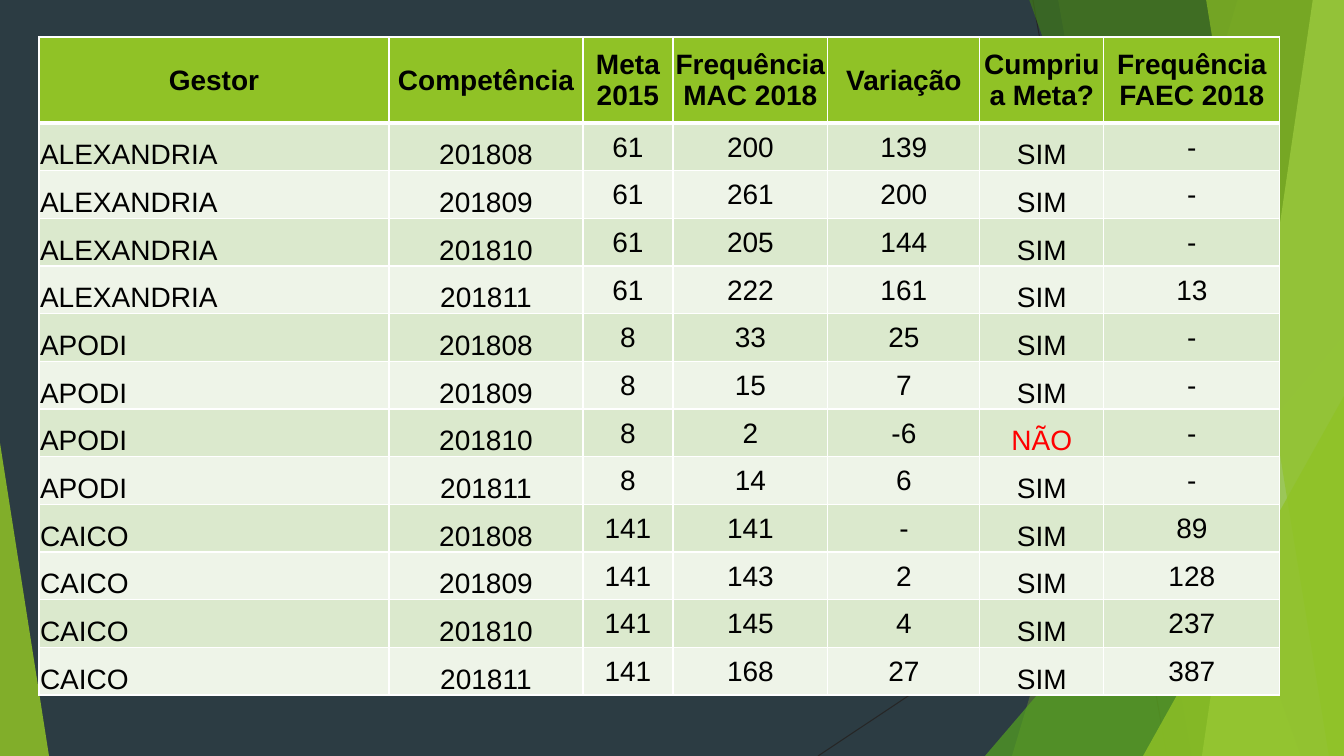
from dataclasses import dataclass

from lxml import etree
from pptx import Presentation
from pptx.dml.color import RGBColor
from pptx.enum.shapes import MSO_CONNECTOR, MSO_SHAPE
from pptx.enum.text import MSO_ANCHOR, PP_ALIGN
from pptx.oxml.ns import qn
from pptx.util import Emu, Pt

STRAIGHT = MSO_CONNECTOR.STRAIGHT
TRIANGLE = MSO_SHAPE.ISOSCELES_TRIANGLE
MIDDLE, BOTTOM = MSO_ANCHOR.MIDDLE, MSO_ANCHOR.BOTTOM
LEFT, CENTER = PP_ALIGN.LEFT, PP_ALIGN.CENTER

WIDTH, HEIGHT = 1344, 756
EMU_PER_PX = 914400 / 100.8


@dataclass(frozen=True)
class Theme:
    background: str = "2C3C43"
    lime: str = "90C226"
    green: str = "54A021"
    forest: str = "3F7819"
    pale_lime: str = "C0E474"
    ray: str = "262626"
    bands: tuple = ("DBE9CD", "EEF4E8")
    border: str = "FFFFFF"
    ink: str = "000000"
    alert: str = "FF0000"
    font: str = "Arial"
    size: int = 20
    thin: int = 1
    thick: int = 3
    hairline: float = 0.75


def px(length):
    return Emu(round(length * EMU_PER_PX))


def rgb(color):
    return RGBColor.from_string(color)


def write(frame, text, *, font, size, color, bold=False, align=CENTER):
    """Fill a text frame, one paragraph per line of text."""
    frame.word_wrap = True
    for index, line in enumerate(text.split("\n")):
        paragraph = frame.paragraphs[0] if index == 0 else frame.add_paragraph()
        paragraph.alignment = align
        run = paragraph.add_run()
        run.text = line
        run.font.name, run.font.size, run.font.bold = font, Pt(size), bold
        run.font.color.rgb = rgb(color)


class SlideBuilder:
    def __init__(self, slide, theme):
        self.slide, self.theme = slide, theme
        slide.background.fill.solid()
        slide.background.fill.fore_color.rgb = rgb(theme.background)

    def line(self, start, end):
        ray = self.slide.shapes.add_connector(STRAIGHT, *map(px, start + end))
        ray.line.color.rgb = rgb(self.theme.ray)
        ray.line.width = Pt(self.theme.hairline)
        etree.SubElement(ray._element.spPr, qn("a:effectLst"))

    def paint(self, shape, color, opacity):
        shape.shadow.inherit = False
        shape.line.fill.background()
        shape.fill.solid()
        shape.fill.fore_color.rgb = rgb(color)
        tint = shape._element.spPr.find(qn("a:solidFill"))[0]
        etree.SubElement(tint, qn("a:alpha"), val=str(opacity * 1000))

    def facet(self, top_x, bottom_x, color, opacity):
        """Full-height panel from a slanted left edge to the slide's right edge."""
        builder = self.slide.shapes.build_freeform(top_x, -1, scale=EMU_PER_PX)
        builder.add_line_segments([(WIDTH, -1), (WIDTH, HEIGHT), (bottom_x, HEIGHT)])
        self.paint(builder.convert_to_shape(), color, opacity)

    def triangle(self, left, top, width, apex, color, opacity):
        """Triangle standing on the bottom edge of the slide."""
        box = map(px, (left, top, width, HEIGHT - top))
        shape = self.slide.shapes.add_shape(TRIANGLE, *box)
        shape.adjustments[0] = apex
        self.paint(shape, color, opacity)

    def cell(self, cell, text, *, fill, anchor, top_width, bottom_width, **style):
        cell.vertical_anchor = anchor
        cell.margin_left = cell.margin_right = cell.margin_top = px(1)
        cell.margin_bottom = 0
        properties = cell._tc.get_or_add_tcPr()
        thin = self.theme.thin
        for side, width in zip("LRTB", (thin, thin, top_width, bottom_width)):
            edge = etree.SubElement(properties, qn(f"a:ln{side}"), w=str(Pt(width)))
            solid = etree.SubElement(edge, qn("a:solidFill"))
            etree.SubElement(solid, qn("a:srgbClr"), val=self.theme.border)
        cell.fill.solid()
        cell.fill.fore_color.rgb = rgb(fill)
        write(cell.text_frame, text, font=self.theme.font, size=self.theme.size, **style)

    def table(self, left, top, height, header_height, widths, rows):
        theme = self.theme
        table = self.slide.shapes.add_table(
            len(rows), len(widths), px(left), px(top), px(sum(widths)), px(height)
        ).table
        for column, width in zip(table.columns, widths):
            column.width = px(width)
        body_height = (height - header_height) / (len(rows) - 1)
        for r, row in enumerate(rows):
            header = r == 0
            table.rows[r].height = px(header_height if header else body_height)
            for c, text in enumerate(row):
                self.cell(
                    table.cell(r, c),
                    text,
                    fill=theme.lime if header else theme.bands[(r - 1) % 2],
                    anchor=BOTTOM if not header and c in BOTTOM_COLUMNS else MIDDLE,
                    top_width=theme.thick if r == 1 else theme.thin,
                    bottom_width=theme.thick if header else theme.thin,
                    color=theme.alert if text == "NÃO" else theme.ink,
                    bold=header,
                    align=LEFT if c == 0 and not header else CENTER,
                )


# Table content: gestor, meta, MAC frequencies and FAEC frequencies per month
HEADINGS = ["Gestor", "Competência", "Meta\n2015", "Frequência MAC 2018",
            "Variação", "Cumpriu a Meta?", "Frequência FAEC 2018"]
COLUMN_WIDTHS = [350, 194, 90, 155, 152, 124, 176]
BOTTOM_COLUMNS = (0, 1, 5)
MONTHS = ["201808", "201809", "201810", "201811"]
GESTORES = [
    ("ALEXANDRIA", 61, (200, 261, 205, 222), (0, 0, 0, 13)),
    ("APODI", 8, (33, 15, 2, 14), (0, 0, 0, 0)),
    ("CAICO", 141, (141, 143, 145, 168), (89, 128, 237, 387)),
]


def table_rows():
    rows = [HEADINGS]
    for gestor, meta, mac_values, faec_values in GESTORES:
        for month, mac, faec in zip(MONTHS, mac_values, faec_values):
            variation = mac - meta
            rows.append([gestor, month, str(meta), str(mac), str(variation or "-"),
                         "SIM" if variation >= 0 else "NÃO", str(faec or "-")])
    return rows


def main():
    theme = Theme()
    deck = Presentation()
    deck.slide_width, deck.slide_height = px(WIDTH), px(HEIGHT)
    builder = SlideBuilder(deck.slides.add_slide(deck.slide_layouts[6]), theme)

    # Faceted backdrop, from back to front
    builder.line((1033, 0), (1167, HEIGHT))
    builder.line((WIDTH, 406), (818, HEIGHT))
    builder.facet(1238, 1012, theme.lime, 30)
    builder.facet(1058, 1192, theme.lime, 20)
    builder.triangle(985, 336, 359, 1, theme.green, 72)
    builder.facet(1029, 1301, theme.forest, 70)
    builder.facet(1313, 1202, theme.pale_lime, 70)
    builder.facet(1206, 1329, theme.lime, 65)
    builder.triangle(1143, 396, 201, 1, theme.lime, 80)
    builder.triangle(0, 443, 49, 0, theme.lime, 85)

    # Results by gestor and month
    builder.table(39, 37, 658, 86, COLUMN_WIDTHS, table_rows())

    deck.save("out.pptx")


if __name__ == "__main__":
    main()
